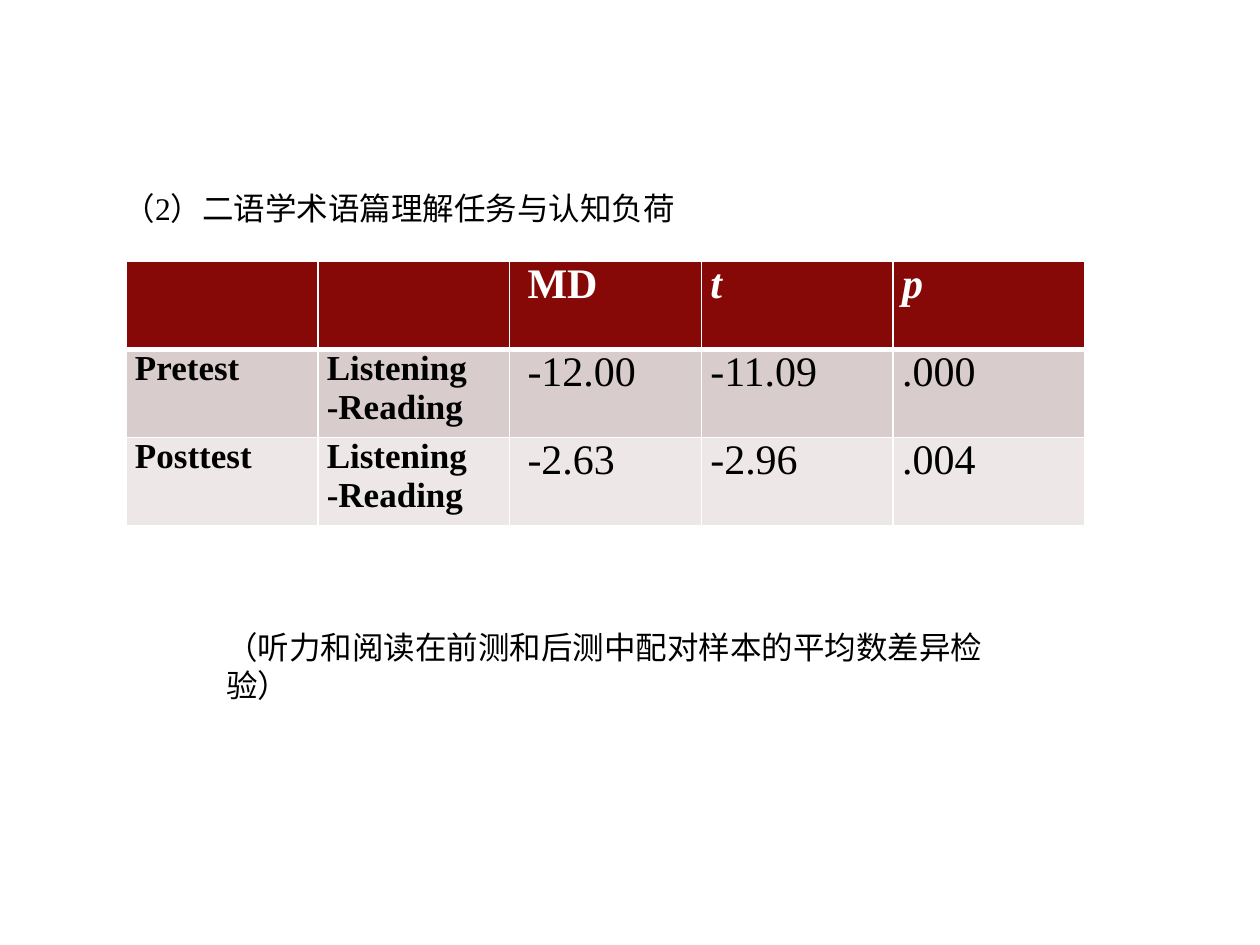
from dataclasses import dataclass

from lxml.etree import SubElement
from pptx import Presentation
from pptx.dml.color import RGBColor
from pptx.enum.text import MSO_ANCHOR, MSO_AUTO_SIZE, PP_ALIGN
from pptx.oxml.ns import qn
from pptx.util import Pt

EMU_PER_PX = 914400 / 126


@dataclass(frozen=True)
class Theme:
    font: str = "Times New Roman"
    text: str = "000000"
    header_text: str = "FFFFFF"
    header_fill: str = "860908"
    row_fills: tuple = ("D9CCCC", "EDE7E7")
    border: str = "FFFFFF"
    body_size: int = 18
    label_size: int = 20
    value_size: int = 24


THEME = Theme()
HEADERS = ["", "", "MD", "t", "p"]
RESULTS = [
    ["Pretest", "Listening -Reading", "-12.00", "-11.09", ".000"],
    ["Posttest", "Listening -Reading", "-2.63", "-2.96", ".004"],
]
LABEL_COLUMNS = 2
MEAN_COLUMN = 2


def px(length):
    return round(length * EMU_PER_PX)


def style_font(font, size, color, bold=False, italic=False):
    font.name = THEME.font
    font.size = Pt(size)
    font.bold = bold
    font.italic = italic
    font.color.rgb = RGBColor.from_string(color)


def fill_text(shape, text):
    frame = shape.text_frame
    frame.text = text
    frame.word_wrap = True
    frame.auto_size = MSO_AUTO_SIZE.NONE
    frame.vertical_anchor = MSO_ANCHOR.TOP
    para = frame.paragraphs[0]
    para.alignment = PP_ALIGN.LEFT
    style_font(para.runs[0].font, THEME.body_size, THEME.text)


def place_title(page, box, text):
    title = page.shapes.title
    title.left, title.top, title.width, title.height = map(px, box)
    fill_text(title, text)


def add_caption(page, box, text):
    fill_text(page.shapes.add_textbox(*map(px, box)), text)


def set_borders(cell, bottom=1, top=1):
    """Draw the four cell edges; widths are in points."""
    properties = cell._tc.get_or_add_tcPr()
    widths = {"a:lnL": 1, "a:lnR": 1, "a:lnT": top, "a:lnB": bottom}
    for position, (tag, width) in enumerate(widths.items()):
        line = SubElement(properties, qn(tag), w=str(Pt(width)))
        fill = SubElement(line, qn("a:solidFill"))
        SubElement(fill, qn("a:srgbClr"), val=THEME.border)
        properties.insert(position, line)


def format_cell(cell, row, column):
    is_header = row == 0
    is_label = not is_header and column < LABEL_COLUMNS
    cell.margin_left = cell.margin_right = px(9)
    cell.margin_top = cell.margin_bottom = 0
    cell.fill.solid()
    fill = THEME.header_fill if is_header else THEME.row_fills[row - 1]
    cell.fill.fore_color.rgb = RGBColor.from_string(fill)
    set_borders(cell, bottom=3 if is_header else 1, top=3 if row == 1 else 1)

    para = cell.text_frame.paragraphs[0]
    if column == MEAN_COLUMN:
        para._p.get_or_add_pPr().set("indent", str(px(9)))
    for span in para.runs:
        style_font(
            span.font,
            THEME.label_size if is_label else THEME.value_size,
            THEME.header_text if is_header else THEME.text,
            bold=is_header or is_label,
            italic=is_header and column > MEAN_COLUMN,
        )


def add_results_table(page, box):
    rows = [HEADERS, *RESULTS]
    frame = page.shapes.add_table(len(rows), len(HEADERS), *map(px, box))
    for row, texts in enumerate(rows):
        for column, text in enumerate(texts):
            cell = frame.table.cell(row, column)
            cell.text = text
            format_cell(cell, row, column)


def main():
    deck = Presentation()
    deck.slide_width, deck.slide_height = px(1260), px(945)
    page = deck.slides.add_slide(deck.slide_layouts[5])
    place_title(page, (111, 183, 624, 50), "（2）二语学术语篇理解任务与认知负荷")
    add_results_table(page, (126, 261, 959, 265))
    add_caption(page, (214, 622, 822, 50),
                "（听力和阅读在前测和后测中配对样本的平均数差异检验）")
    deck.save("out.pptx")


if __name__ == "__main__":
    main()
